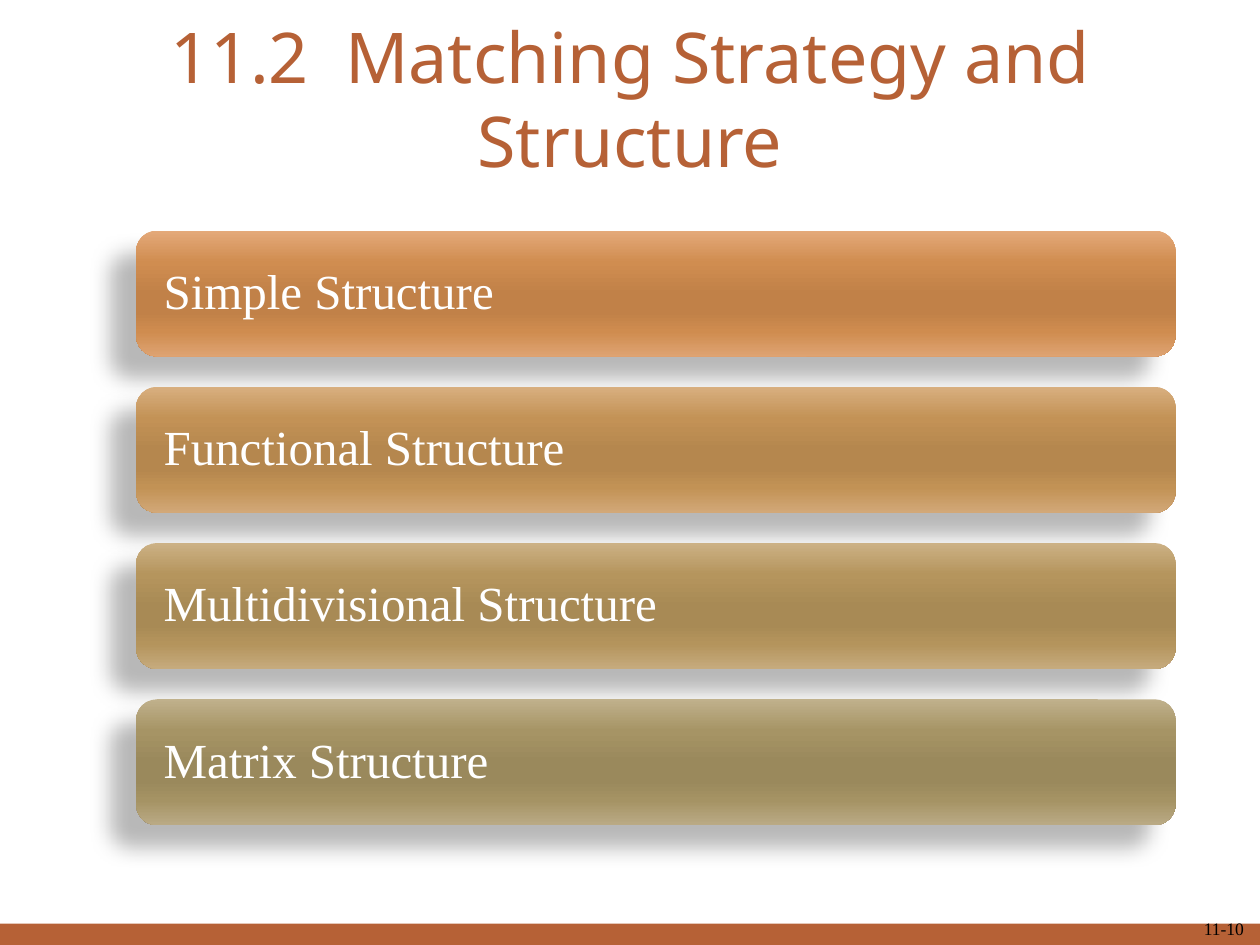
from dataclasses import dataclass

from lxml.etree import SubElement
from pptx import Presentation
from pptx.dml.color import RGBColor
from pptx.enum.shapes import MSO_SHAPE
from pptx.enum.text import MSO_ANCHOR, PP_ALIGN
from pptx.oxml.ns import qn
from pptx.util import Inches, Pt


@dataclass(frozen=True)
class Theme:
    accent: str = "B66136"
    light: str = "FFFFFF"
    dark: str = "000000"
    title_font: str = "Noto Sans"
    body_font: str = "Times New Roman"
    title_size: int = 40
    bar_size: int = 28
    number_size: int = 10


THEME = Theme()
WIDTH, HEIGHT = 10, 7.5

# Bars: one column, equal row pitch
BAR_LEFT, BAR_TOP, BAR_WIDTH, BAR_HEIGHT = 1.08, 1.83, 8.25, 1
BAR_PITCH = 1.24
STOPS = (0, 25, 50, 65, 80, 100)
BARS = [
    ("Simple Structure", "E4A97A D08D50 C18148 C18148 CF8C4F DEA372"),
    ("Functional Structure", "D8AF7F C39256 B5874E B5874E C29255 D2A878"),
    ("Multidivisional Structure", "CCB185 B5955D A88A55 A88A55 B4945C C6AB7E"),
    ("Matrix Structure", "C0B18C A69465 9A895C 9A895C A59364 BAAA85"),
]


def set_text(shape, text, font, size, color, align=PP_ALIGN.LEFT,
             anchor=MSO_ANCHOR.MIDDLE):
    tf = shape.text_frame
    tf.word_wrap = True
    tf.vertical_anchor = anchor
    p = tf.paragraphs[0]
    p.text = text
    p.alignment = align
    p.font.name = font
    p.font.size = Pt(size)
    p.font.color.rgb = RGBColor.from_string(color)
    return p


def add_text(s, box, *args, **kwargs):
    return set_text(s.shapes.add_textbox(*map(Inches, box)), *args, **kwargs)


def add_block(s, kind, box):
    sp = s.shapes.add_shape(kind, *map(Inches, box))
    sp.line.fill.background()
    sp.shadow.inherit = False
    return sp


def set_shadow(sp, alpha, blur, distance, angle):
    effects = sp._element.spPr.find(qn("a:effectLst"))
    shadow = SubElement(effects, qn("a:outerShdw"), blurRad=str(Pt(blur)),
                        dist=str(Pt(distance)), dir=str(angle * 60000),
                        algn="ctr", rotWithShape="0")
    color = SubElement(shadow, qn("a:srgbClr"), val=THEME.dark)
    SubElement(color, qn("a:alpha"), val=str(alpha * 1000))


def set_gradient(sp, colors):
    sp.fill.gradient()
    sp.fill.gradient_angle = 270  # counter-clockwise: top to bottom
    stops = sp._element.spPr.find(qn("a:gradFill")).find(qn("a:gsLst"))
    for old in list(stops):
        stops.remove(old)
    for position, color in zip(STOPS, colors):
        stop = SubElement(stops, qn("a:gs"), pos=str(position * 1000))
        SubElement(stop, qn("a:srgbClr"), val=color)


def add_bar(s, row, text, colors):
    top = BAR_TOP + row * BAR_PITCH
    sp = add_block(s, MSO_SHAPE.ROUNDED_RECTANGLE,
                   (BAR_LEFT, top, BAR_WIDTH, BAR_HEIGHT))
    set_gradient(sp, colors.split())
    set_shadow(sp, 28, 11.8, 19.7, 141)
    tf = sp.text_frame
    tf.margin_left = tf.margin_right = Inches(0.17)
    p = set_text(sp, text, THEME.body_font, THEME.bar_size, THEME.light)
    p.line_spacing = 0.9


def add_footer(s, number):
    strip = 0.17
    sp = add_block(s, MSO_SHAPE.RECTANGLE, (0, HEIGHT - strip, WIDTH, strip))
    sp.fill.solid()
    sp.fill.fore_color.rgb = RGBColor.from_string(THEME.accent)
    add_text(s, (7.33, 7.12, 2.64, 0.38), number, THEME.body_font,
             THEME.number_size, THEME.dark, PP_ALIGN.RIGHT, MSO_ANCHOR.BOTTOM)


def main():
    prs = Presentation()
    prs.slide_width, prs.slide_height = Inches(WIDTH), Inches(HEIGHT)
    s = prs.slides.add_slide(prs.slide_layouts[6])

    # Footer strip and page number
    add_footer(s, "11-10")

    # Structure types
    for row, (text, colors) in enumerate(BARS):
        add_bar(s, row, text, colors)

    # Title
    add_text(s, (0, 0, WIDTH, 1.55), "11.2  Matching Strategy and Structure",
             THEME.title_font, THEME.title_size, THEME.accent, PP_ALIGN.CENTER)

    prs.save("out.pptx")


if __name__ == "__main__":
    main()
